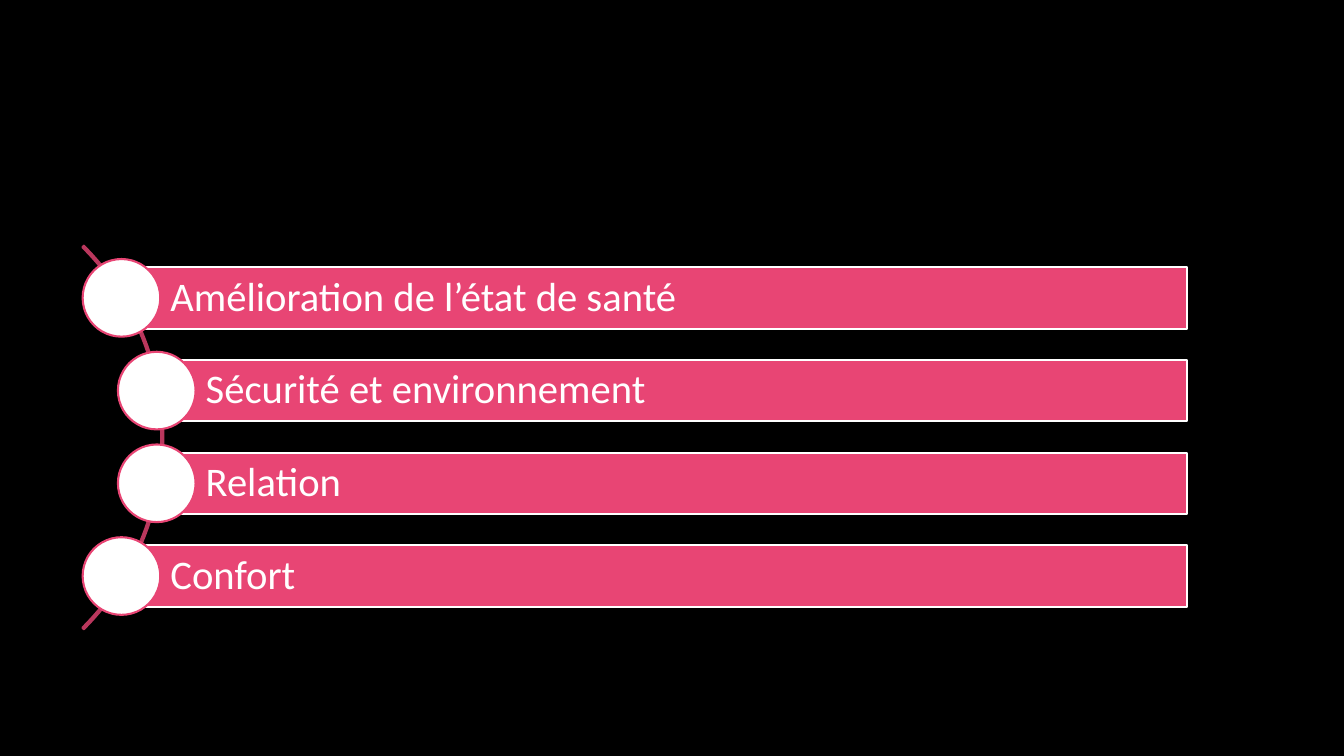
from dataclasses import dataclass

from pptx import Presentation
from pptx import util as u
from pptx.dml.color import RGBColor
from pptx.enum import shapes, text

PX = 9144  # EMU per px, 100 px to the inch


@dataclass(frozen=True)
class Theme:
    background: str = "000000"
    accent: str = "E84574"
    arc: str = "BA375D"
    light: str = "FFFFFF"
    font: str = "Calibri"
    label_size: float = 29
    line_width: float = 1.5


THEME = Theme()

# Each care goal with its indent along the arc
GOALS = [
    ("Amélioration de l’état de santé", 0),
    ("Sécurité et environnement", 35),
    ("Relation", 35),
    ("Confort", 0),
]
BAR_LEFT, BAR_TOP, BAR_RIGHT, BAR_HEIGHT = 120, 265, 1177, 61
PITCH = 92
DOT = 77


def px(length):
    return u.Emu(length * PX)


def apply_format(target, values):
    for name, value in values.items():
        setattr(target, name, value)


def add_outlined(slide, kind, left, top, width, height, line, fill=None):
    outlined = slide.shapes.add_shape(kind, *map(px, (left, top, width, height)))
    outlined.shadow.inherit = False
    if fill:
        outlined.fill.solid()
        outlined.fill.fore_color.rgb = RGBColor.from_string(fill)
    else:
        outlined.fill.background()
    outlined.line.color.rgb = RGBColor.from_string(line)
    outlined.line.width = u.Pt(THEME.line_width)
    return outlined


def add_arc(slide):
    arc = add_outlined(slide, shapes.MSO_SHAPE.BLOCK_ARC,
                       -376, 165, 538, 538, THEME.arc)
    for index, value in enumerate((189, 27, 0.004)):
        arc.adjustments[index] = value


def add_bar(slide, goal, left, top):
    bar = add_outlined(slide, shapes.MSO_SHAPE.RECTANGLE, left, top,
                       BAR_RIGHT - left, BAR_HEIGHT, THEME.light, THEME.accent)
    frame = bar.text_frame
    apply_format(frame, {
        "word_wrap": True,
        "vertical_anchor": text.MSO_ANCHOR.MIDDLE,
        "margin_left": px(49),
        "margin_top": px(8),
        "margin_right": px(8),
        "margin_bottom": px(8),
    })
    label = frame.paragraphs[0]
    apply_format(label, {"alignment": text.PP_ALIGN.LEFT, "line_spacing": 0.9})
    run = label.add_run()
    run.text = goal
    apply_format(run.font, {"name": THEME.font, "size": u.Pt(THEME.label_size)})
    run.font.color.rgb = RGBColor.from_string(THEME.light)


def add_dot(slide, center_x, center_y):
    add_outlined(slide, shapes.MSO_SHAPE.OVAL, center_x - DOT // 2,
                 center_y - DOT // 2, DOT, DOT, THEME.accent, THEME.light)


def main():
    deck = Presentation()
    apply_format(deck, {"slide_width": px(1333), "slide_height": px(750)})
    slide = deck.slides.add_slide(deck.slide_layouts[6])
    slide.background.fill.solid()
    slide.background.fill.fore_color.rgb = RGBColor.from_string(THEME.background)

    # Arc behind the list
    add_arc(slide)

    # Goals, each a bar with a dot on its left edge
    for row, (goal, indent) in enumerate(GOALS):
        left, top = BAR_LEFT + indent, BAR_TOP + row * PITCH
        add_bar(slide, goal, left, top)
        add_dot(slide, left, top + BAR_HEIGHT // 2)

    deck.save("out.pptx")


if __name__ == "__main__":
    main()
